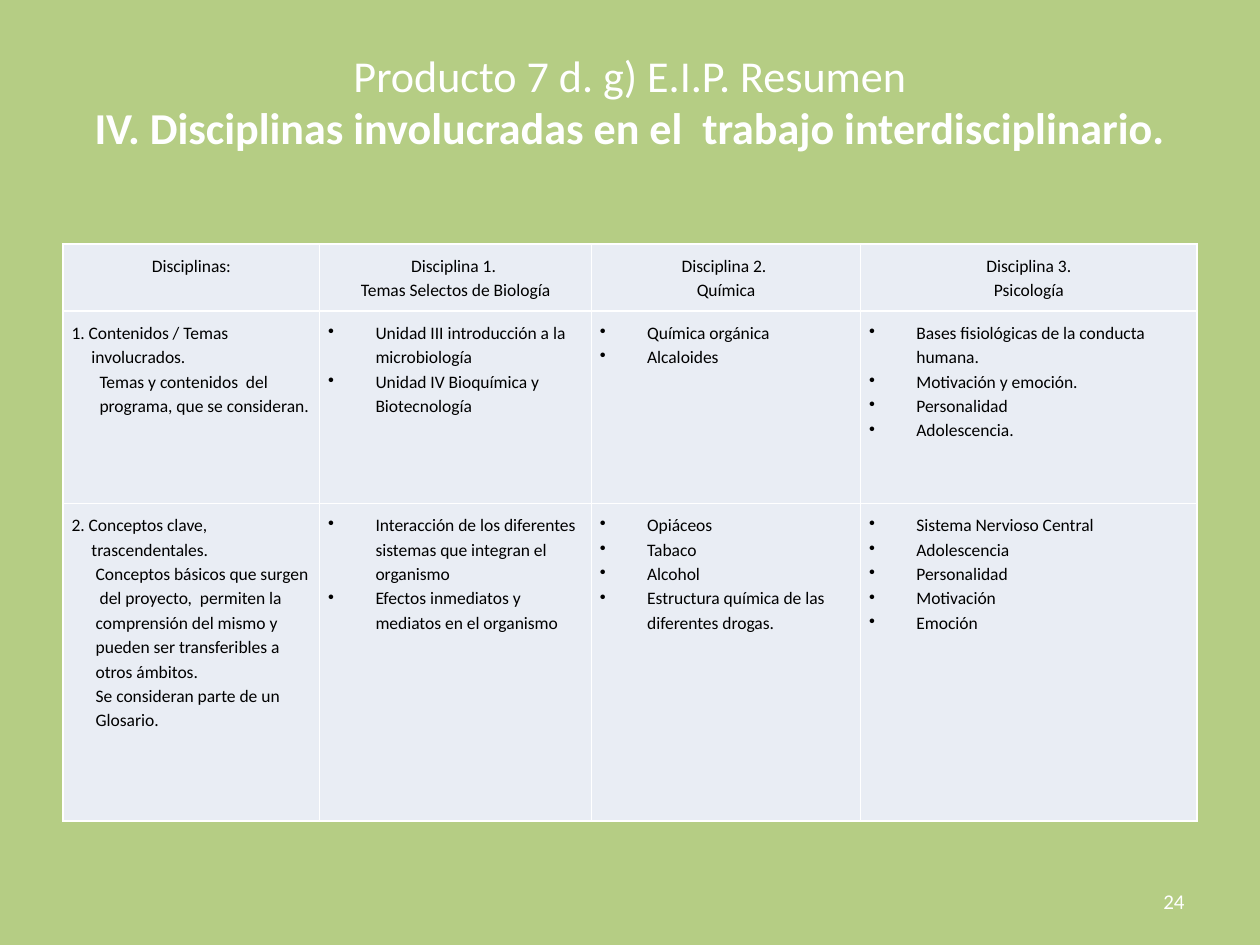
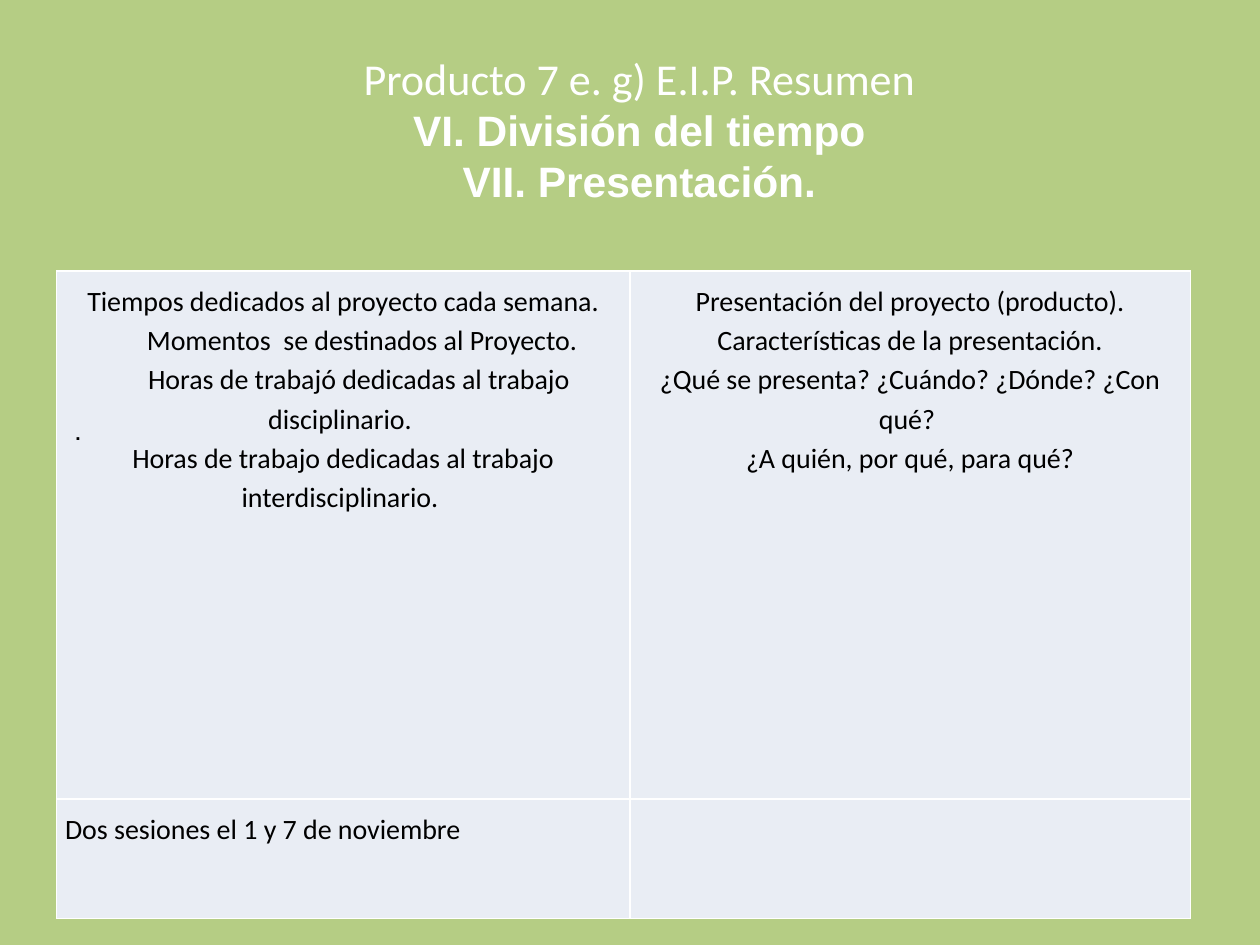
from lxml.etree import SubElement
from pptx import Presentation
from pptx.dml.color import RGBColor as Color
from pptx.enum.text import MSO_ANCHOR as Anchor, MSO_AUTO_SIZE as AutoSize, PP_ALIGN as Align
from pptx.oxml.ns import qn
from pptx.util import Pt

GREEN = Color(0xB5, 0xCD, 0x84)
PALE = Color(0xE9, 0xED, 0xF4)
WHITE = Color(0xFF, 0xFF, 0xFF)
BLACK = Color(0, 0, 0)

LEFT = {"align": Align.LEFT}
CENTER = {"align": Align.CENTER}
BULLET = {"margin": 27, "indent": -27, "bullet": "•"}


def styled(style, *lines):
    return [(line, style) for line in lines]


PAGES = [
    {
        "title": [
            ("Producto 7 d. g) E.I.P. Resumen", {"name": "Calibri", "size": Pt(25.2), "bold": False}),
            ("IV. Disciplinas involucradas en el  trabajo interdisciplinario.",
             {"name": "Calibri", "size": Pt(25.2), "bold": True}),
        ],
        "title_box": (36, 21.6, 648, 90),
        "title_inset": 5.8,
        "table_at": (36, 139.5),
        "columns": [146.7, 155.2, 153.9, 192.2],
        "rows": [38.2, 110, 181.6],
        "text_size": 10,
        "cells": [
            [
                styled(CENTER, "Disciplinas:"),
                styled(CENTER, "Disciplina 1. ", "Temas Selectos de Biología"),
                styled(CENTER, "Disciplina 2. ", "Química"),
                styled(CENTER, "Disciplina 3.", "Psicología"),
            ],
            [
                styled(LEFT, "1. Contenidos / Temas")
                + styled({"margin": 11.4}, "involucrados.")
                + styled({"margin": 16}, "Temas y contenidos  del  programa, que se consideran."),
                styled(BULLET, "Unidad III introducción a la microbiología",
                       "Unidad IV Bioquímica y Biotecnología"),
                styled(BULLET, "Química orgánica", "Alcaloides"),
                styled(BULLET, "Bases fisiológicas de la conducta humana.",
                       "Motivación y emoción.", "Personalidad", "Adolescencia."),
            ],
            [
                styled(LEFT, "2. Conceptos clave,")
                + styled({"margin": 11.4}, "trascendentales.")
                + styled({"margin": 13.8},
                         "Conceptos básicos que surgen  del proyecto,  permiten la comprensión "
                         "del mismo y  pueden ser transferibles a otros ámbitos.",
                         "Se consideran parte de un  Glosario."),
                styled(BULLET, "Interacción de los diferentes sistemas que integran el organismo",
                       "Efectos inmediatos y mediatos en el organismo"),
                styled(BULLET, "Opiáceos", "Tabaco", "Alcohol",
                       "Estructura química de las diferentes drogas."),
                styled(BULLET, "Sistema Nervioso Central", "Adolescencia", "Personalidad",
                       "Motivación", "Emoción"),
            ],
        ],
        "label": ("24", (516.2, 500.4, 167.8, 28.8), Align.RIGHT,
                  {"name": "Calibri", "size": Pt(12), "bold": False}, WHITE),
    },
    {
        "title": [
            ("Producto 7 e. g) E.I.P. Resumen", {"name": "Calibri", "size": Pt(25.2), "bold": False}),
            ("VI. División del tiempo", {"name": "Arial", "size": Pt(24.3), "bold": True}),
            ("VII. Presentación.", {"name": "Arial", "size": Pt(24.3), "bold": True}),
        ],
        "title_box": (36, 21.6, 658.8, 118),
        "title_inset": 7.5,
        "table_at": (32.3, 154.8),
        "columns": [327.6, 320.4],
        "rows": [301.7, 68.4],
        "text_size": 16,
        "cells": [
            [
                styled(CENTER, "Tiempos dedicados al proyecto cada semana.")
                + styled({**CENTER, "indent": 21.7}, "Momentos  se destinados al Proyecto.")
                + styled({**CENTER, "indent": 18}, "Horas de trabajó dedicadas al trabajo disciplinario. ")
                + styled(CENTER, "Horas de trabajo dedicadas al trabajo interdisciplinario. "),
                styled(CENTER, "Presentación del proyecto (producto).",
                       "Características de la presentación.",
                       "¿Qué se presenta? ¿Cuándo? ¿Dónde? ¿Con qué? ",
                       "¿A quién, por qué, para qué?"),
            ],
            [styled(LEFT, "Dos sesiones el 1 y 7 de noviembre"), []],
        ],
        "label": (".", (36, 236.9, 235.4, 20.9), Align.LEFT,
                  {"name": "Arial", "size": Pt(11), "bold": True}, BLACK),
    },
]


def points(values):
    return [Pt(value) for value in values]


def set_all(target, values):
    for name, value in values.items():
        setattr(target, name, value)


def add_span(para, text, font, color):
    span = para.add_run()
    span.text = text
    set_all(span.font, font)
    span.font.color.rgb = color


def paragraphs(frame, count):
    return [frame.paragraphs[0] if index == 0 else frame.add_paragraph() for index in range(count)]


def write_title(page, content):
    box = page.shapes.title
    set_all(box, dict(zip(("left", "top", "width", "height"), points(content["title_box"]))))
    frame = box.text_frame
    set_all(frame, {"auto_size": AutoSize.NONE, "word_wrap": True, "vertical_anchor": Anchor.TOP,
                    "margin_top": Pt(content["title_inset"])})
    for para, (text, font) in zip(paragraphs(frame, len(content["title"])), content["title"]):
        para.alignment = Align.CENTER
        add_span(para, text, font, WHITE)


def write_label(page, text, place, align, font, color):
    frame = page.shapes.add_textbox(*points(place)).text_frame
    set_all(frame, {"word_wrap": True, "vertical_anchor": Anchor.MIDDLE})
    para = frame.paragraphs[0]
    para.alignment = align
    add_span(para, text, font, color)


def format_cell(cell):
    properties = cell._tc.get_or_add_tcPr()
    for side in ("a:lnL", "a:lnR", "a:lnT", "a:lnB"):
        line = SubElement(properties, qn(side), w=str(Pt(1)))
        fill = SubElement(line, qn("a:solidFill"))
        SubElement(fill, qn("a:srgbClr"), val=str(WHITE))
    cell.fill.solid()
    cell.fill.fore_color.rgb = PALE
    for side in ("left", "right", "top", "bottom"):
        setattr(cell, f"margin_{side}", Pt(4.9))


def write_cell(cell, lines, size):
    for para, (text, style) in zip(paragraphs(cell.text_frame, len(lines)), lines):
        set_all(para, {"alignment": style.get("align", Align.LEFT), "line_spacing": 1.15})
        properties = para._p.get_or_add_pPr()
        properties.set("marL", str(Pt(style.get("margin", 0))))
        properties.set("indent", str(Pt(style.get("indent", 0))))
        if "bullet" in style:
            SubElement(properties, qn("a:buChar"), char=style["bullet"])
        add_span(para, text, {"name": "Calibri", "size": Pt(size)}, BLACK)


def add_grid(page, content):
    columns, rows = content["columns"], content["rows"]
    place = (*content["table_at"], sum(columns), sum(rows))
    table = page.shapes.add_table(len(rows), len(columns), *points(place)).table
    set_all(table, {"first_row": False, "horz_banding": False})
    for column, width in zip(table.columns, columns):
        column.width = Pt(width)
    for row, height, row_cells in zip(table.rows, rows, content["cells"]):
        row.height = Pt(height)
        for cell, lines in zip(row.cells, row_cells):
            format_cell(cell)
            write_cell(cell, lines, content["text_size"])


def main():
    deck = Presentation()
    set_all(deck, {"slide_width": Pt(720), "slide_height": Pt(540)})
    background = deck.slide_master.background.fill
    background.solid()
    background.fore_color.rgb = GREEN
    for content in PAGES:
        page = deck.slides.add_slide(deck.slide_layouts[5])
        write_title(page, content)
        add_grid(page, content)
        write_label(page, *content["label"])
    deck.save("out.pptx")


if __name__ == "__main__":
    main()
